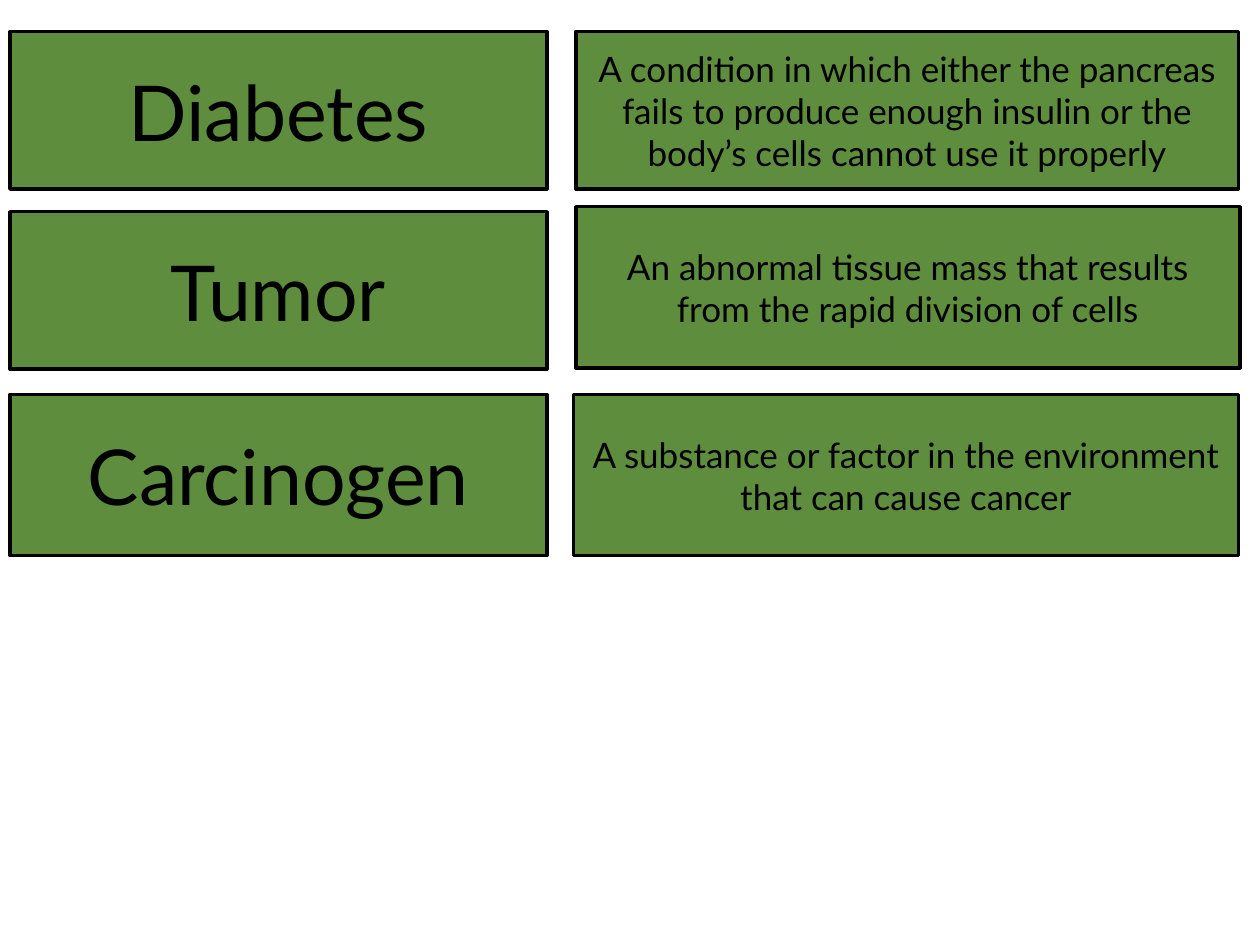
from pptx import Presentation
from pptx.dml.color import RGBColor
from pptx.enum.shapes import MSO_SHAPE
from pptx.enum.text import MSO_ANCHOR, PP_ALIGN
from pptx.util import Inches, Pt

GREEN = RGBColor(0x5D, 0x8D, 0x3D)
BLACK = RGBColor(0, 0, 0)

TERM = {"name": "Lato", "size": Pt(44)}
MEANING = {"name": "Lato", "size": Pt(20)}

# Each card: text, (left, top, width, height) in inches
ROWS = [
    (("Diabetes", (0.08, 0.25, 4.26, 1.25)),
     ("A condition in which either the pancreas fails to produce enough "
      "insulin or the body’s cells cannot use it properly",
      (4.57, 0.25, 5.26, 1.25))),
    (("Tumor", (0.08, 1.68, 4.26, 1.25)),
     ("An abnormal tissue mass that results from the rapid division of cells",
      (4.57, 1.64, 5.27, 1.28))),
    (("Carcinogen", (0.08, 3.13, 4.26, 1.28)),
     ("A substance or factor in the environment that can cause cancer",
      (4.55, 3.13, 5.28, 1.28))),
]

deck = Presentation()
deck.slide_width, deck.slide_height = Inches(10), Inches(7.5)
slide = deck.slides.add_slide(deck.slide_layouts[6])

for row in ROWS:
    for (text, box), style in zip(row, (TERM, MEANING)):
        card = slide.shapes.add_shape(
            MSO_SHAPE.FLOWCHART_PROCESS, *[Inches(side) for side in box])
        card.shadow.inherit = False
        card.fill.solid()
        card.fill.fore_color.rgb = GREEN
        card.line.color.rgb = BLACK
        card.line.width = Pt(2)

        frame = card.text_frame
        frame.word_wrap = True
        frame.vertical_anchor = MSO_ANCHOR.MIDDLE
        para = frame.paragraphs[0]
        para.alignment = PP_ALIGN.CENTER
        run = para.add_run()
        run.text = text
        run.font.color.rgb = BLACK
        for key, value in style.items():
            setattr(run.font, key, value)

deck.save("out.pptx")
